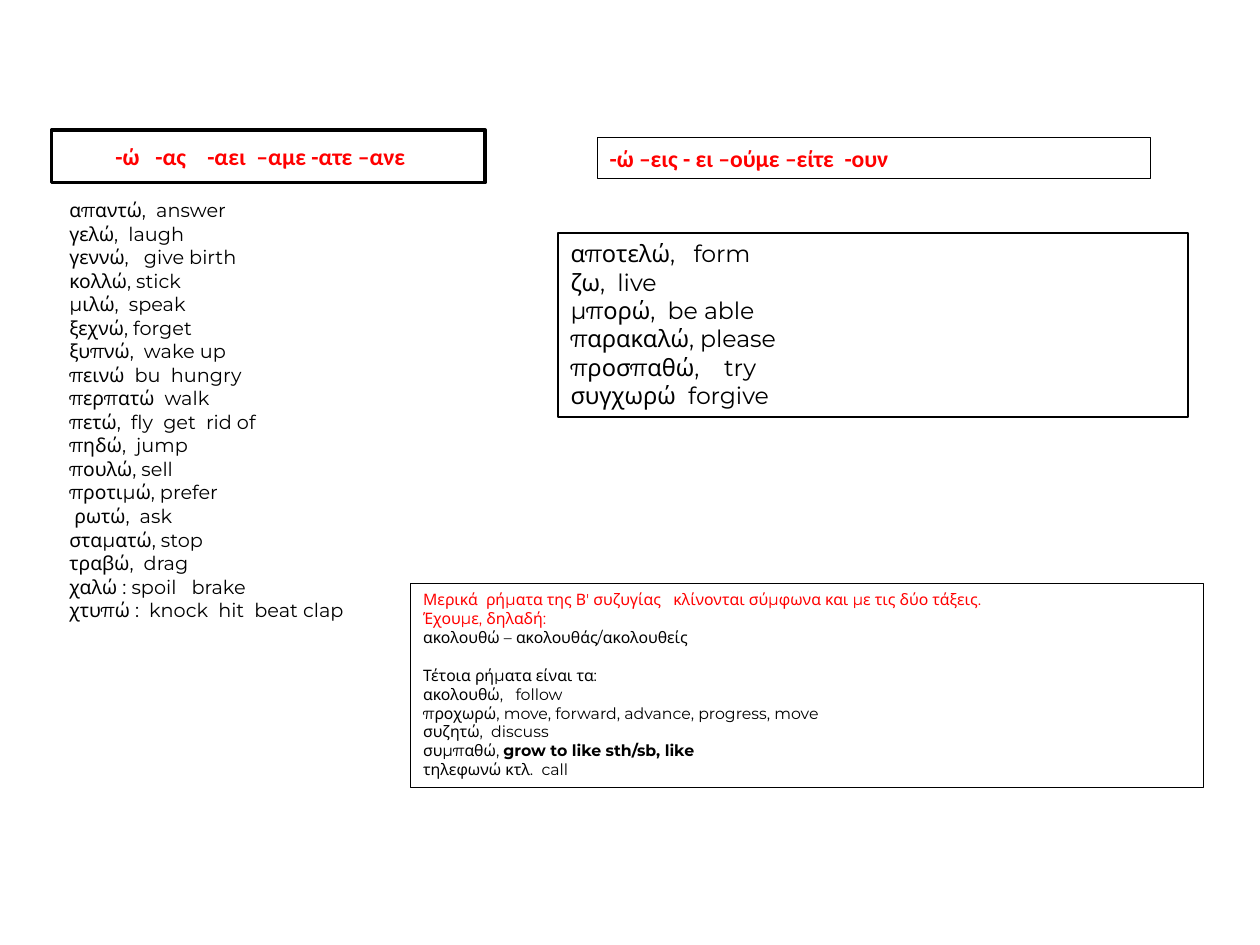
from pptx import Presentation
from pptx.dml.color import RGBColor
from pptx.enum.shapes import MSO_SHAPE
from pptx.enum.text import MSO_ANCHOR, PP_ALIGN
from pptx.util import Inches, Pt


def color(value):
    return RGBColor.from_string(value)


def write(tf, lines, size, name, align=PP_ALIGN.LEFT, bold=False):
    for i, (text, hue) in enumerate(lines):
        p = tf.paragraphs[0] if i == 0 else tf.add_paragraph()
        p.text = text
        p.alignment = align
        p.font.size = Pt(size)
        p.font.name = name
        p.font.bold = bold
        p.font.color.rgb = color(hue)


BLACK, RED = "000000", "FF0000"

a_verbs = [
    "απαντώ,  answer", "γελώ,  laugh", "γεννώ,   give birth", "κολλώ, stick",
    "μιλώ,  speak", "ξεχνώ, forget", "ξυπνώ,  wake up", "πεινώ  bu  hungry",
    "περπατώ  walk", "πετώ,  fly  get  rid of", "πηδώ,  jump", "πουλώ, sell",
    "προτιμώ, prefer", " ρωτώ,  ask", "σταματώ, stop", "τραβώ,  drag",
    "χαλώ : spoil   brake", "χτυπώ :  knock  hit  beat clap",
]
b_verbs = [
    "αποτελώ,   form", "ζω,  live", "μπορώ,  be able", "παρακαλώ, please",
    "προσπαθώ,    try", "συγχωρώ  forgive",
]
both_verbs = [
    ("Μερικά  ρήματα της Β' συζυγίας   κλίνονται σύμφωνα και με τις δύο τάξεις.\vΈχουμε, δηλαδή:", RED),
    ("ακολουθώ – ακολουθάς/ακολουθείς\v", BLACK),
    ("Τέτοια ρήματα είναι τα:", BLACK),
    ("ακολουθώ,   follow", BLACK),
    ("προχωρώ, move, forward, advance, progress, move", BLACK),
    ("συζητώ,  discuss", BLACK),
    ("συμπαθώ, ", BLACK),
    ("τηλεφωνώ κτλ.  call", BLACK),
]

prs = Presentation()
prs.slide_width = Inches(10)
prs.slide_height = Inches(7.5)
s = prs.slides.add_slide(prs.slide_layouts[6])

table = s.shapes.add_table(1, 1, Inches(0.52), Inches(1.55), Inches(2.56), Inches(3.38)).table
table.first_row = False
table.horz_banding = False
cell = table.cell(0, 0)
cell.fill.background()
cell.vertical_anchor = MSO_ANCHOR.MIDDLE
cell.margin_left = cell.margin_right = cell.margin_top = cell.margin_bottom = Inches(0.03)
write(cell.text_frame, [(v, BLACK) for v in a_verbs], 11, "Montserrat", PP_ALIGN.JUSTIFY)

frames = []
for left, top, width, height, weight in [
    (0.41, 1.03, 3.44, 0.42, 2),
    (4.43, 1.85, 5, 1.46, 0.75),
    (3.26, 4.63, 6.29, 1.62, 0.75),
    (4.74, 1.09, 4.39, 0.33, 0.75),
]:
    sp = s.shapes.add_shape(MSO_SHAPE.RECTANGLE, Inches(left), Inches(top), Inches(width), Inches(height))
    sp.shadow.inherit = False
    sp.fill.background()
    sp.line.color.rgb = color(BLACK)
    sp.line.width = Pt(weight)
    tf = sp.text_frame
    tf.word_wrap = True
    tf.vertical_anchor = MSO_ANCHOR.TOP
    frames.append(tf)

a_endings, b_list, both_list, b_endings = frames
a_endings.vertical_anchor = MSO_ANCHOR.MIDDLE
write(a_endings, [("-ώ   -ας    -αει  –αμε -ατε –ανε   ", RED)], 13.5, "Calibri", PP_ALIGN.CENTER, True)
write(b_list, [(v, BLACK) for v in b_verbs], 13.5, "Montserrat")
write(both_list, both_verbs, 9, "Montserrat")
write(b_endings, [("-ώ –εις - ει –ούμε –είτε  -ουν", RED)], 13.5, "Calibri", bold=True)

r = both_list.paragraphs[6].add_run()
r.text = "grow to like sth/sb, like"
r.font.bold = True

prs.save("out.pptx")
